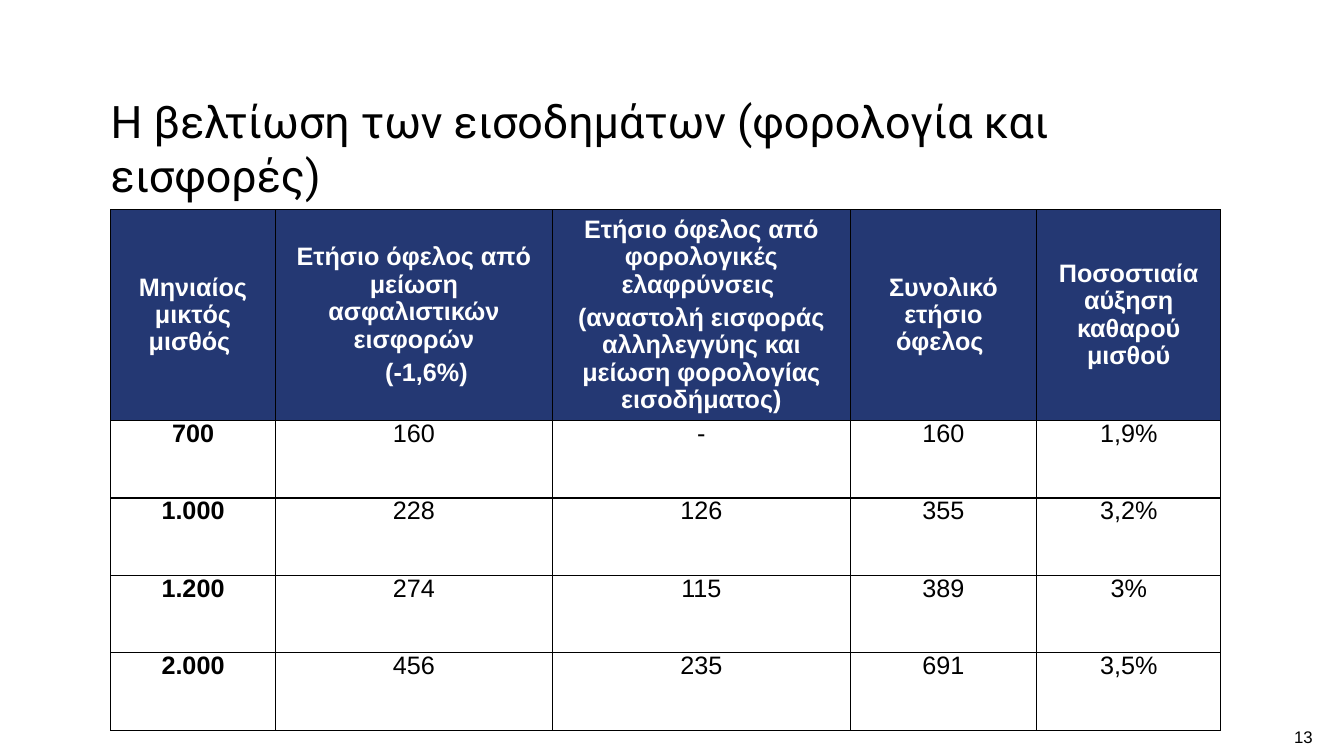
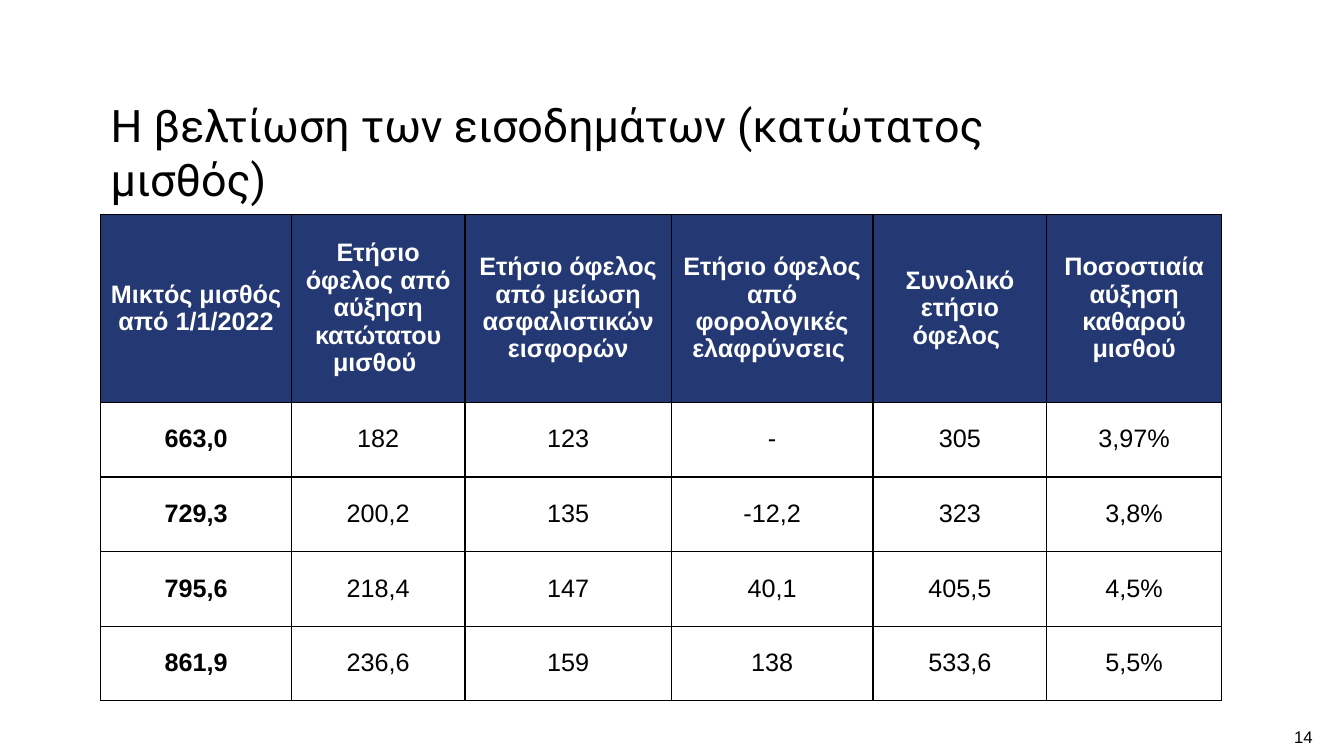
from dataclasses import dataclass

from lxml import etree
from pptx import Presentation
from pptx.dml.color import RGBColor
from pptx.enum.text import MSO_ANCHOR, MSO_AUTO_SIZE, PP_ALIGN
from pptx.oxml.ns import qn
from pptx.util import Emu, Inches, Pt

CENTER = PP_ALIGN.CENTER
LEFT = PP_ALIGN.LEFT
TOP = MSO_ANCHOR.TOP
MIDDLE = MSO_ANCHOR.MIDDLE
FIT_SHAPE = MSO_AUTO_SIZE.SHAPE_TO_FIT_TEXT

SLIDE_W, SLIDE_H = Inches(13.34), Inches(7.5)
BLANK_LAYOUT = 6
NAVY, BLACK, WHITE = "243873", "000000", "FFFFFF"
TITLE_FONT, BODY_FONT = "Roboto", "Arial"
BORDER_SIDES = ("a:lnL", "a:lnR", "a:lnT", "a:lnB")


@dataclass
class Box:
    """A rectangle in percent of the slide's width and height."""
    left: float
    top: float
    width: float
    height: float

    def emu(self) -> tuple[Emu, Emu, Emu, Emu]:
        """Return left, top, width and height as lengths."""
        return (Emu(int(SLIDE_W * self.left / 100)), Emu(int(SLIDE_H * self.top / 100)),
                Emu(int(SLIDE_W * self.width / 100)), Emu(int(SLIDE_H * self.height / 100)))


@dataclass
class IncomeSlide:
    """The content of one slide with an income table."""
    number: int
    title: str
    title_box: Box
    table_box: Box
    column_shares: list[float]
    header_share: float
    body_anchor: MSO_ANCHOR
    headers: list[str]
    rows: list[list[str]]


TOTAL = "Συνολικό ετήσιο όφελος "
INCREASE = "Ποσοστιαία αύξηση καθαρού μισθού"
CUT = "Ετήσιο όφελος από μείωση ασφαλιστικών εισφορών"
RELIEF = "Ετήσιο όφελος από φορολογικές ελαφρύνσεις "
NUMBER_BOX = Box(95.73, 95.33, 2.5, 4.1)

SLIDES = [
    IncomeSlide(
        13, "Η βελτίωση των εισοδημάτων (φορολογία και εισφορές)",
        Box(7.5, 11.1, 72.1, 11.3), Box(8.25, 27.75, 82.6, 65.2),
        [14.8, 25, 26.8, 16.8, 16.6], 37.2, TOP,
        ["Μηνιαίος μικτός μισθός ", CUT + "\n(-1,6%)",
         RELIEF + "\n(αναστολή εισφοράς αλληλεγγύης και μείωση φορολογίας εισοδήματος)",
         TOTAL, INCREASE],
        [["700", "160", "-", "160", "1,9%"],
         ["1.000", "228", "126", "355", "3,2%"],
         ["1.200", "274", "115", "389", "3%"],
         ["2.000", "456", "235", "691", "3,5%"]]),
    IncomeSlide(
        14, "Η βελτίωση των εισοδημάτων (κατώτατος μισθός)",
        Box(7.5, 11.6, 73, 10.8), Box(7.5, 28.4, 83.4, 64.3),
        [17, 15.5, 18.4, 18, 15.5, 15.6], 38.6, MIDDLE,
        ["Μικτός μισθός από 1/1/2022", "Ετήσιο όφελος από αύξηση κατώτατου μισθού ",
         CUT, RELIEF, TOTAL, INCREASE],
        [["663,0", "182", "123", "-", "305", "3,97%"],
         ["729,3", "200,2", "135", "-12,2", "323", "3,8%"],
         ["795,6", "218,4", "147", "40,1", "405,5", "4,5%"],
         ["861,9", "236,6", "159", "138", "533,6", "5,5%"]]),
]


def rgb(value: str) -> RGBColor:
    """Turn a hex string into a colour."""
    return RGBColor.from_string(value)


def style(p, font: str, size: float, color: str = BLACK, bold: bool = False, align=CENTER) -> None:
    """Set the alignment and font of a paragraph."""
    p.alignment = align
    p.font.name, p.font.size, p.font.bold = font, Pt(size), bold
    p.font.color.rgb = rgb(color)


def add_text(s, box: Box, text: str, inset: float, wrap: bool):
    """Add a text box and return its text frame."""
    tf = s.shapes.add_textbox(*box.emu()).text_frame
    tf.word_wrap = wrap
    tf.margin_left = tf.margin_right = tf.margin_top = tf.margin_bottom = Inches(inset)
    tf.text = text
    return tf


def add_borders(cell) -> None:
    """Draw a thin black line on each side of a cell."""
    tcPr = cell._tc.get_or_add_tcPr()
    for i, side in enumerate(BORDER_SIDES):
        ln = etree.Element(qn(side), w=str(Pt(1)))
        fill = etree.SubElement(ln, qn("a:solidFill"))
        etree.SubElement(fill, qn("a:srgbClr"), val=BLACK)
        tcPr.insert(i, ln)


def fill_cell(cell, text: str, header: bool, bold: bool, anchor: MSO_ANCHOR) -> None:
    """Write and style one table cell."""
    cell.margin_left = cell.margin_right = Inches(0.07)
    cell.margin_top = cell.margin_bottom = 0
    cell.vertical_anchor = anchor
    if header:
        cell.fill.solid()
        cell.fill.fore_color.rgb = rgb(NAVY)
    else:
        cell.fill.background()
    add_borders(cell)
    cell.text_frame.text = text
    for p in cell.text_frame.paragraphs:
        if p.text == "(-1,6%)":
            p._p.get_or_add_pPr().set("indent", str(Inches(0.25)))
        p.space_after = Pt(4)
        p.line_spacing = 0.97
        style(p, BODY_FONT, 18, WHITE if header else BLACK, bold)


def add_income_table(s, item: IncomeSlide) -> None:
    """Add the table with its column and row shares."""
    left, top, width, height = item.table_box.emu()
    grid = [item.headers, *item.rows]
    table = s.shapes.add_table(len(grid), len(item.headers), left, top, width, height).table
    table.horz_banding = False
    for column, share in zip(table.columns, item.column_shares):
        column.width = int(width * share / 100)
    body_share = (100 - item.header_share) / len(item.rows)
    for i, values in enumerate(grid):
        header = i == 0
        table.rows[i].height = int(height * (item.header_share if header else body_share) / 100)
        for j, text in enumerate(values):
            fill_cell(table.cell(i, j), text, header, header or j == 0,
                      MIDDLE if header else item.body_anchor)


def add_slide(prs, item: IncomeSlide) -> None:
    """Add one slide with title, table and number."""
    s = prs.slides.add_slide(prs.slide_layouts[BLANK_LAYOUT])
    title = add_text(s, item.title_box, item.title, 0.1, True)
    style(title.paragraphs[0], TITLE_FONT, 32, align=LEFT)
    add_income_table(s, item)
    number = add_text(s, NUMBER_BOX, str(item.number), 0.06, False)
    number.auto_size = FIT_SHAPE
    style(number.paragraphs[0], BODY_FONT, 12)


def main() -> None:
    """Build and save the presentation."""
    prs = Presentation()
    prs.slide_width, prs.slide_height = SLIDE_W, SLIDE_H
    for item in SLIDES:
        add_slide(prs, item)
    prs.save("out.pptx")


if __name__ == "__main__":
    main()
